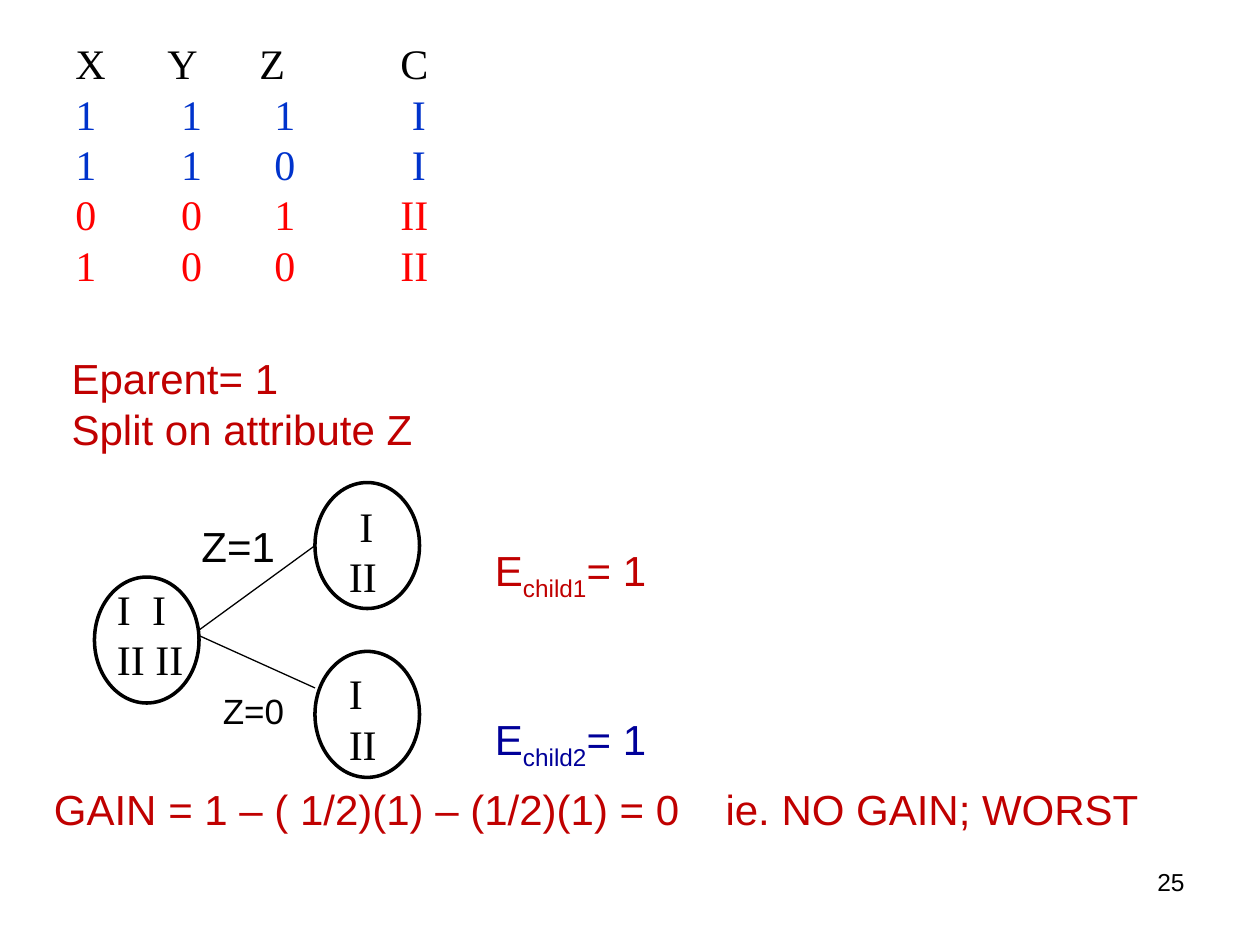
"""Build the decision-tree slide showing the gain of splitting on attribute Z."""
from dataclasses import dataclass

import pptx
import pptx.dml.color
import pptx.enum.shapes
import pptx.enum.text
import pptx.oxml
import pptx.oxml.ns
import pptx.util

Inches = pptx.util.Inches
Pt = pptx.util.Pt
BLACK, RED, DARK_RED, BLUE, NAVY = "000000", "FF0000", "C00000", "0033CC", "000099"
SERIF, SANS = "Times New Roman", "Arial"
LEFT, RIGHT = pptx.enum.text.PP_ALIGN.LEFT, pptx.enum.text.PP_ALIGN.RIGHT
NODE_W, NODE_H = 0.83, 1.0


@dataclass
class Line:
    text: str
    color: str = BLACK
    stops: tuple[float, ...] = ()
    sub: str = ""
    tail: str = ""


@dataclass
class Label:
    x: float
    y: float
    w: float
    h: float
    lines: list[Line]
    font: str = SANS
    size: int = 24
    align: int = LEFT
    wrap: bool = False


@dataclass
class Node:
    x: float
    y: float


@dataclass
class Branch:
    x1: float
    y1: float
    x2: float
    y2: float


def rgb(value: str) -> pptx.dml.color.RGBColor:
    return pptx.dml.color.RGBColor.from_string(value)


def add_run(p, text: str, color: str, label: Label, subscript: bool = False) -> None:
    r = p.add_run()
    r.text = text
    for name, value in {"name": label.font, "size": Pt(label.size)}.items():
        setattr(r.font, name, value)
    r.font.color.rgb = rgb(color)
    if subscript:
        r._r.get_or_add_rPr().set("baseline", "-25000")


def add_tab_stops(p, stops: tuple[float, ...]) -> None:
    tabs = pptx.oxml.parse_xml(f"<a:tabLst {pptx.oxml.ns.nsdecls('a')}/>")
    for stop in stops:
        tab = tabs.makeelement(pptx.oxml.ns.qn("a:tab"), {"pos": str(Inches(stop)), "algn": "l"})
        tabs.append(tab)
    p._p.get_or_add_pPr().append(tabs)


def draw_label(s, label: Label) -> None:
    sp = s.shapes.add_textbox(*map(Inches, (label.x, label.y, label.w, label.h)))
    tf = sp.text_frame
    tf.word_wrap = label.wrap
    for i, line in enumerate(label.lines):
        p = tf.add_paragraph() if i else tf.paragraphs[0]
        for name, value in {"alignment": label.align, "line_spacing": Pt(label.size * 1.2)}.items():
            setattr(p, name, value)
        if line.stops:
            add_tab_stops(p, line.stops)
        add_run(p, line.text, line.color, label)
        if line.sub:
            add_run(p, line.sub, line.color, label, subscript=True)
            add_run(p, line.tail, line.color, label)


def draw_node(s, node: Node) -> None:
    oval = pptx.enum.shapes.MSO_SHAPE.OVAL
    sp = s.shapes.add_shape(oval, *map(Inches, (node.x, node.y, NODE_W, NODE_H)))
    sp.shadow.inherit = False
    sp.fill.background()
    sp.line.color.rgb = rgb(BLACK)
    sp.line.width = Pt(2)


def draw_branch(s, branch: Branch) -> None:
    straight = pptx.enum.shapes.MSO_CONNECTOR.STRAIGHT
    ends = map(Inches, (branch.x1, branch.y1, branch.x2, branch.y2))
    sp = s.shapes.add_connector(straight, *ends)
    sp.line.color.rgb = rgb(BLACK)
    sp.line.width = Pt(0.75)
    sp._element.spPr.append(pptx.oxml.parse_xml(f"<a:effectLst {pptx.oxml.ns.nsdecls('a')}/>"))


HEAD_STOPS, ONE_STOPS, TWO_STOPS = (0.73, 1.46, 2.58), (0.84, 1.58, 2.67), (0.84, 1.58, 2.58)
LABELS = [
    Label(7.17, 6.83, 2.33, 0.52, [Line("25")], size=14, align=RIGHT, wrap=True),
    Label(0.5, 0.25, 3.03, 2.12, [
        Line("X\tY\tZ\tC", BLACK, HEAD_STOPS),
        Line("1\t1\t1\tI", BLUE, ONE_STOPS),
        Line("1\t1\t0\tI", BLUE, ONE_STOPS),
        Line("0\t0\t1\tII", RED, TWO_STOPS),
        Line("1\t0\t0\tII", RED, TWO_STOPS),
    ], SERIF),
    Label(0.47, 2.75, 2.93, 0.91,
          [Line("Eparent= 1", DARK_RED), Line("Split on attribute Z", DARK_RED)]),
    Label(0.83, 4.58, 0.73, 0.91, [Line("I\tI", BLACK, (0.28,)), Line("II II")], SERIF),
    Label(2.67, 3.92, 0.48, 0.91, [Line(" I"), Line("II")], SERIF),
    Label(2.67, 5.25, 0.43, 0.91, [Line("I"), Line("II")], SERIF),
    Label(0.33, 6.17, 8.89, 0.91,
          [Line("GAIN = 1 – ( 1/2)(1) – (1/2)(1) = 0\tie. NO GAIN; WORST", DARK_RED, (5.33,))]),
    Label(1.5, 4.08, 0.79, 0.51, [Line("Z=1")]),
    Label(1.67, 5.42, 0.69, 0.44, [Line("Z=0")], size=20),
    Label(3.83, 5.67, 1.49, 0.51, [Line("E", NAVY, sub="child2", tail="= 1")]),
    Label(3.83, 4.33, 1.49, 0.51, [Line("E", DARK_RED, sub="child1", tail="= 1")]),
]
BRANCHES = [Branch(1.58, 5, 2.5, 4.33), Branch(1.57, 5.04, 2.5, 5.46)]
NODES = [Node(0.75, 4.58), Node(2.5, 3.83), Node(2.5, 5.17)]


def main() -> None:
    prs = pptx.Presentation()
    prs.slide_width, prs.slide_height = Inches(10), Inches(7.5)
    s = prs.slides.add_slide(prs.slide_layouts[6])
    for branch in BRANCHES:
        draw_branch(s, branch)
    for node in NODES:
        draw_node(s, node)
    for label in LABELS:
        draw_label(s, label)
    prs.save("out.pptx")


if __name__ == "__main__":
    main()
